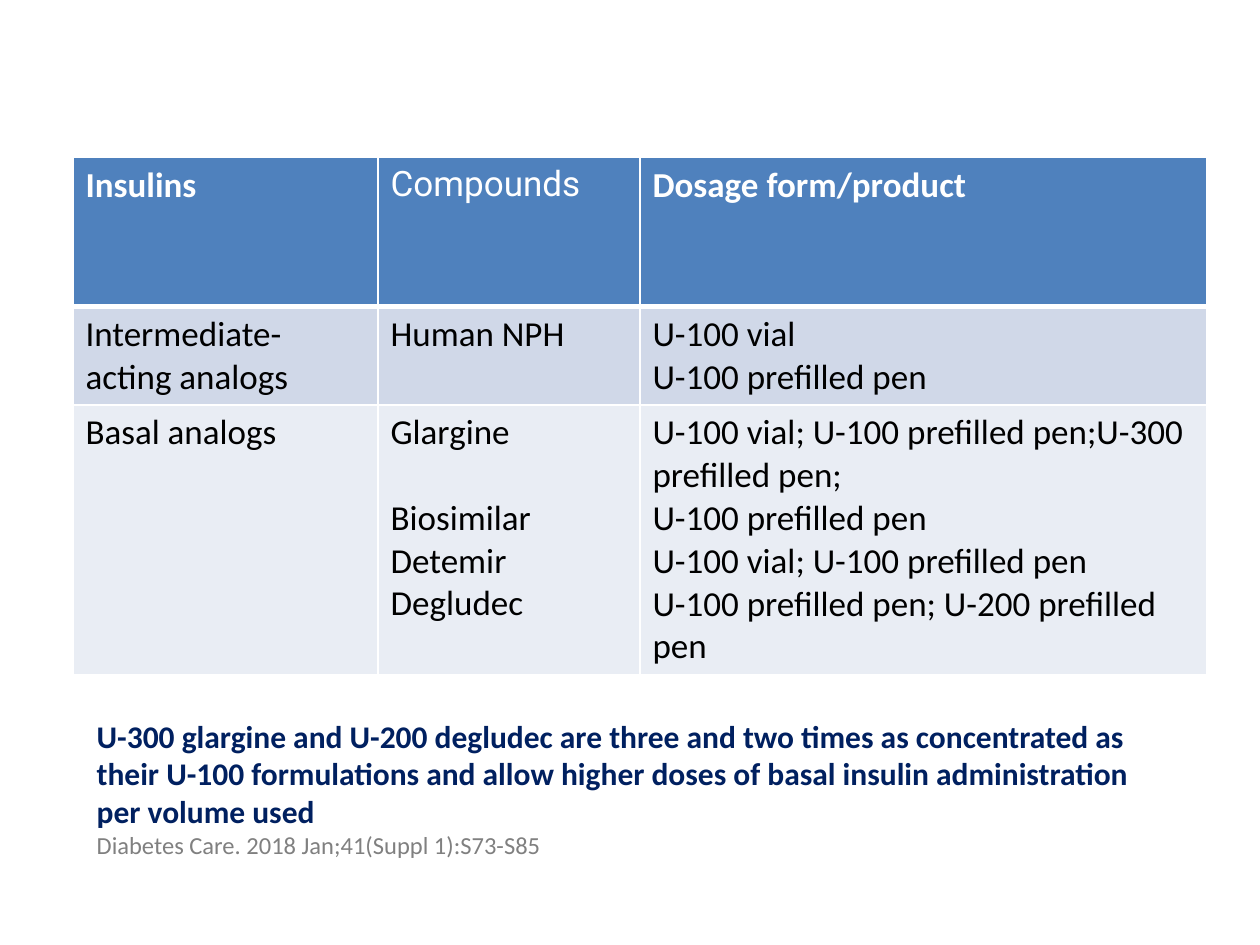
import dataclasses

import lxml.etree
import pptx
import pptx.dml.color
import pptx.enum.text
import pptx.oxml.ns
import pptx.util

Cm = pptx.util.Cm


@dataclasses.dataclass(frozen=True)
class Theme:
    font: str = "Calibri"
    accent: str = "Roboto"
    head: str = "4F81BD"
    bands: tuple = ("D0D8E8", "E9EDF4")
    white: str = "FFFFFF"
    black: str = "000000"
    navy: str = "002060"
    gray: str = "808080"
    cell: int = 20
    note: int = 18
    cite: int = 14
    line: float = 24.4
    thin: int = 1
    thick: int = 3


class Deck:
    """Draws styled tables and notes on the current slide."""

    def __init__(self, theme):
        self.theme = theme
        self.show = pptx.Presentation()
        self.show.slide_width, self.show.slide_height = Cm(25.4), Cm(19.05)
        self.slide = self.show.slides.add_slide(self.show.slide_layouts[6])

    def label(self, par, text, size, color, bold=False, font=None):
        run = par.add_run()
        run.text = text
        run.font.name = font or self.theme.font
        run.font.size = pptx.util.Pt(size)
        run.font.bold = bold
        run.font.color.rgb = pptx.dml.color.RGBColor.from_string(color)

    def lines(self, frame, count):
        return [frame.paragraphs[0]] + [frame.add_paragraph() for _ in range(count - 1)]

    def edge(self, cell, side, width):
        name = pptx.oxml.ns.qn
        line = lxml.etree.SubElement(
            cell._tc.get_or_add_tcPr(), name(f"a:ln{side}"), w=str(pptx.util.Pt(width))
        )
        fill = lxml.etree.SubElement(line, name("a:solidFill"))
        lxml.etree.SubElement(fill, name("a:srgbClr"), val=self.theme.white)

    def paint(self, cell, row):
        look = self.theme
        widths = dict.fromkeys("LRTB", look.thin)
        if row < 2:
            widths["B" if row == 0 else "T"] = look.thick
        for side, width in widths.items():
            self.edge(cell, side, width)
        color = look.bands[(row - 1) % 2] if row else look.head
        cell.fill.solid()
        cell.fill.fore_color.rgb = pptx.dml.color.RGBColor.from_string(color)

    def table(self, left, top, cols, rows, data, gaps):
        look = self.theme
        grid = self.slide.shapes.add_table(
            len(rows), len(cols), Cm(left), Cm(top), Cm(sum(cols)), Cm(sum(rows))
        ).table
        for col, width in zip(grid.columns, cols):
            col.width = Cm(width)
        for r, height in enumerate(rows):
            grid.rows[r].height = Cm(height)
            for c, texts in enumerate(data[r]):
                cell = grid.cell(r, c)
                self.paint(cell, r)
                for par, text in zip(self.lines(cell.text_frame, len(texts)), texts):
                    if text in gaps:
                        par.space_before = pptx.util.Pt(look.line)
                    plain = r > 0 or c == 1
                    self.label(
                        par, text, look.cell,
                        look.black if r else look.white,
                        not plain,
                        look.accent if r == 0 and c == 1 else look.font,
                    )

    def note(self, left, top, width, height, texts):
        box = self.slide.shapes.add_textbox(Cm(left), Cm(top), Cm(width), Cm(height))
        frame = box.text_frame
        frame.word_wrap = True
        frame.vertical_anchor = pptx.enum.text.MSO_ANCHOR.MIDDLE
        for par, args in zip(self.lines(frame, len(texts)), texts):
            self.label(par, *args)


def main():
    look = Theme()
    deck = Deck(look)
    data = [
        [["Insulins"], ["Compounds"], ["Dosage form/product"]],
        [
            ["Intermediate-acting analogs"],
            ["Human NPH"],
            ["U-100 vial", "U-100 prefilled pen"],
        ],
        [
            ["Basal analogs"],
            ["Glargine", "Biosimilar", "Detemir", "Degludec"],
            [
                "U-100 vial; U-100 prefilled pen;U-300 prefilled pen;",
                "U-100 prefilled pen",
                "U-100 vial; U-100 prefilled pen",
                "U-100 prefilled pen; U-200 prefilled pen",
            ],
        ],
    ]
    deck.table(1.47, 3.18, [6.15, 5.28, 11.43], [3, 1.98, 5.42], data, {"Biosimilar"})
    fact = (
        "U-300 glargine and U-200 degludec are three and two times as concentrated "
        "as their U-100 formulations and allow higher doses of basal insulin "
        "administration per volume used"
    )
    deck.note(1.7, 14.4, 21.8, 2.97, [
        (fact, look.note, look.navy, True),
        ("Diabetes Care. 2018 Jan;41(Suppl 1):S73-S85", look.cite, look.gray),
    ])
    deck.show.save("out.pptx")


if __name__ == "__main__":
    main()
